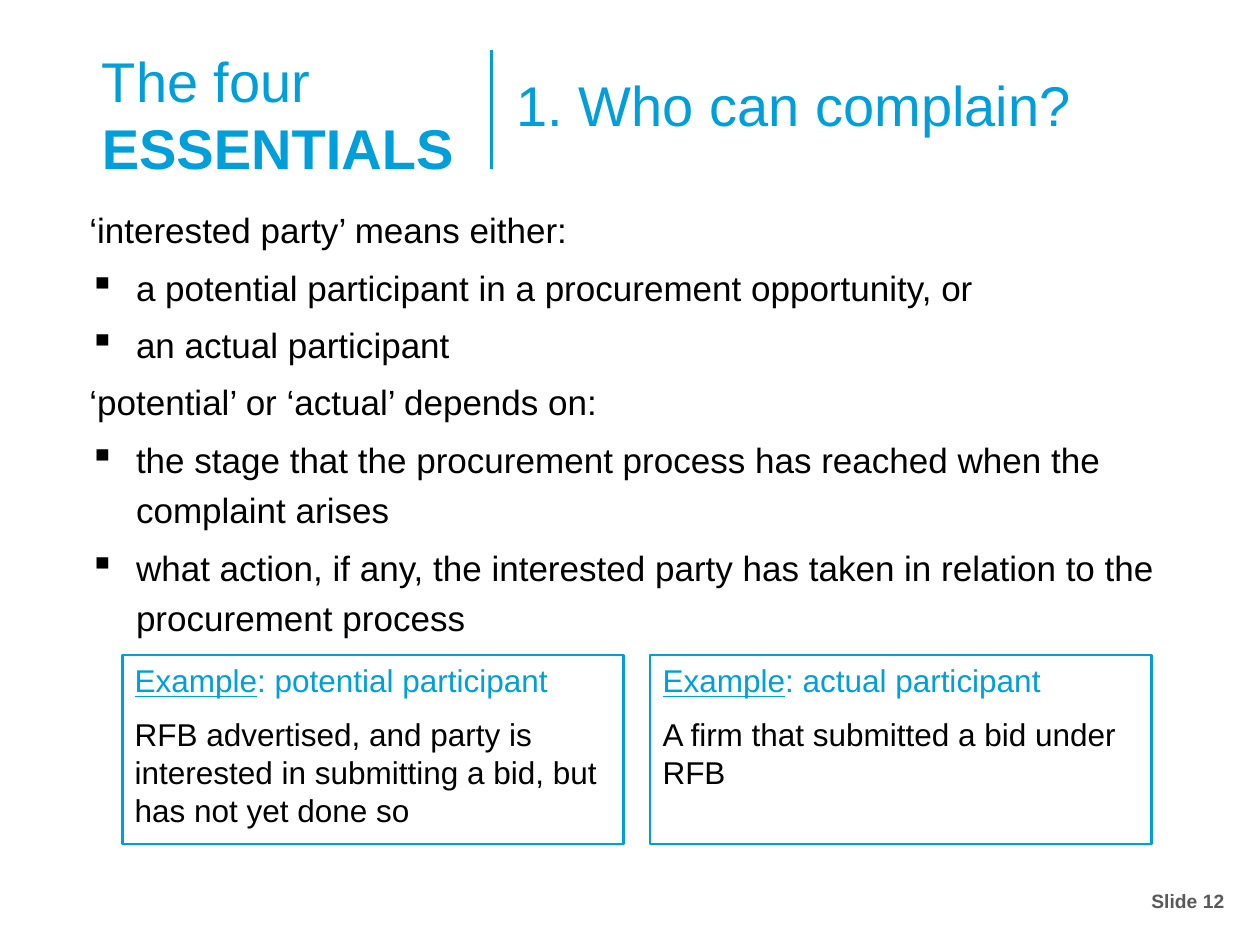
from dataclasses import dataclass

from lxml import etree
from pptx import Presentation
from pptx.dml.color import RGBColor
from pptx.enum.shapes import MSO_CONNECTOR, MSO_SHAPE
from pptx.enum.text import MSO_ANCHOR, PP_ALIGN
from pptx.oxml.ns import qn
from pptx.util import Inches, Pt

LINE = MSO_CONNECTOR.STRAIGHT
RECT = MSO_SHAPE.RECTANGLE
TOP = MSO_ANCHOR.TOP
LEFT = PP_ALIGN.LEFT


@dataclass(frozen=True)
class Theme:
    face: str = "Arial"
    blue: str = "009FDA"
    black: str = "000000"
    grey: str = "595959"
    head: int = 32
    body: int = 20
    card: int = 18
    foot: int = 11
    rule: float = 1.5


@dataclass(frozen=True)
class Box:
    x: float
    y: float
    w: float
    h: float

    def share(self, x, y, w, h):
        """A box given as shares of this one."""
        return Box(self.x + x * self.w, self.y + y * self.h,
                   w * self.w, h * self.h)

    def emu(self):
        return [Inches(v) for v in (self.x, self.y, self.w, self.h)]


THEME = Theme()
PAGE = Box(0, 0, 10, 7.5)
HANG = 0.37

# Body lines: (is a bullet, text)
POINTS = [
    (False, "‘interested party’ means either:"),
    (True, "a potential participant in a procurement opportunity, or"),
    (True, "an actual participant"),
    (False, "‘potential’ or ‘actual’ depends on:"),
    (True, "the stage that the procurement process has reached when the "
           "complaint arises"),
    (True, "what action, if any, the interested party has taken in relation "
           "to the procurement process"),
]

CASES = [
    (": potential participant",
     "RFB advertised, and party is interested in submitting a bid, but has "
     "not yet done so"),
    (": actual participant", "A firm that submitted a bid under RFB"),
]


def style(para, size, hue, bold=False):
    para.alignment = LEFT
    font = para.font
    font.name, font.size, font.bold = THEME.face, Pt(size), bold
    font.color.rgb = RGBColor.from_string(hue)


def indent(para, left, first=0):
    props = para._p.get_or_add_pPr()
    props.set("marL", str(Inches(left)))
    props.set("indent", str(Inches(first)))
    return props


def paras(frame, count):
    """Set up a wrapped frame and return its paragraphs."""
    frame.word_wrap = True
    frame.vertical_anchor = TOP
    for _ in range(count - 1):
        frame.add_paragraph()
    return frame.paragraphs


def text(slide, box, lines, size, hue):
    """Add a text box; lines are (text, bold) pairs."""
    frame = slide.shapes.add_textbox(*box.emu()).text_frame
    for para, (words, bold) in zip(paras(frame, len(lines)), lines):
        para.text = words
        style(para, size, hue, bold)
    return frame


def header(slide, box):
    # Series title
    text(slide, box.share(0, 0, 0.39, 1),
         [("The four", False), ("ESSENTIALS", True)], THEME.head, THEME.blue)

    # Divider
    bar = box.share(0.4, 0.07, 0, 0.9)
    rule = slide.shapes.add_connector(
        LINE, Inches(bar.x), Inches(bar.y),
        Inches(bar.x), Inches(bar.y + bar.h))
    rule.line.color.rgb = RGBColor.from_string(THEME.blue)
    rule.line.width = Pt(THEME.rule)
    etree.SubElement(rule._element.spPr, qn("a:effectLst"))

    # Question
    frame = text(slide, box.share(0.35, 0.18, 0.65, 0.61),
                 [("1. Who can complain?", False)], THEME.head, THEME.blue)
    indent(frame.paragraphs[0], 0.5)


def points(slide, box):
    frame = slide.shapes.add_textbox(*box.emu()).text_frame
    frame.margin_left = frame.margin_right = 0
    frame.margin_top = frame.margin_bottom = 0
    rows = paras(frame, len(POINTS))
    for i, (para, (dot, words)) in enumerate(zip(rows, POINTS)):
        para.text = words
        para.line_spacing = 1.2
        if i:
            para.space_before = Pt(THEME.body * 0.2)
        if dot:
            props = indent(para, HANG, -HANG)
            etree.SubElement(props, qn("a:buChar")).set("char", "▪")
        style(para, THEME.body, THEME.black)


def card(slide, box, title, words):
    shape = slide.shapes.add_shape(RECT, *box.emu())
    shape.shadow.inherit = False
    shape.fill.background()
    shape.line.color.rgb = RGBColor.from_string(THEME.blue)
    shape.line.width = Pt(THEME.rule)
    top, main = paras(shape.text_frame, 2)
    label = top.add_run()
    label.text = "Example"
    label.font.underline = True
    top.add_run().text = title
    main.text = words
    main.space_before = Pt(4.5)
    for para, hue in ((top, THEME.blue), (main, THEME.black)):
        para.space_after = Pt(4.5)
        style(para, THEME.card, hue)


def cards(slide, box, gap=0.21):
    wide = (box.w - gap * (len(CASES) - 1)) / len(CASES)
    for i, case in enumerate(CASES):
        card(slide, Box(box.x + i * (wide + gap), box.y, wide, box.h), *case)


def footer(slide, box):
    text(slide, box, [("Slide 12", True)], THEME.foot, THEME.grey)


def main():
    deck = Presentation()
    deck.slide_width, deck.slide_height = Inches(PAGE.w), Inches(PAGE.h)
    slide = deck.slides.add_slide(deck.slide_layouts[6])
    header(slide, Box(0.71, 0.32, 7.98, 1.05))
    points(slide, Box(0.71, 1.59, 8.9, 3.51))
    cards(slide, Box(0.97, 5.2, 8.17, 1.5))
    footer(slide, Box(9.04, 7.01, 0.84, 0.4))
    deck.save("out.pptx")


if __name__ == "__main__":
    main()
